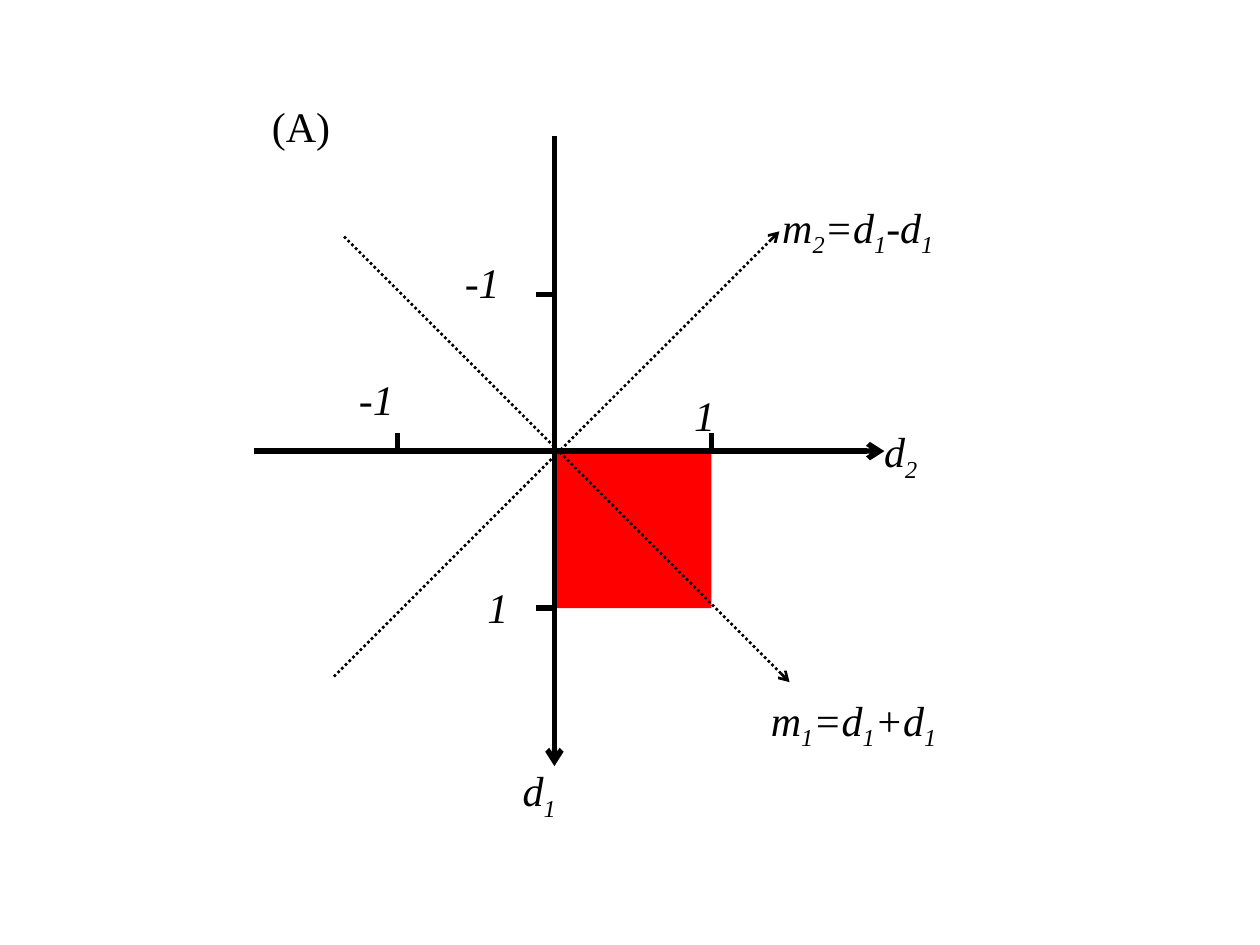
import pptx
import pptx.dml.color
import pptx.enum.dml
import pptx.enum.shapes
import pptx.enum.text
import pptx.oxml
import pptx.oxml.ns
import pptx.util

Pt = pptx.util.Pt
BLACK = pptx.dml.color.RGBColor(0x00, 0x00, 0x00)
RED = pptx.dml.color.RGBColor(0xFF, 0x00, 0x00)
DOTTED = pptx.enum.dml.MSO_LINE.ROUND_DOT  # sysDot

# Coordinate system, in points
X0, Y0 = 316.8, 257.8
UNIT = 89.7
TICK_NEAR, TICK_FAR = 1.4, 10.4


class Diagram:
    font_name = "Times New Roman"
    font_size = 24
    label_height = 36

    def __init__(self, slide):
        self.slide = slide

    def square(self, left, top, side):
        area = self.slide.shapes.add_shape(
            pptx.enum.shapes.MSO_SHAPE.RECTANGLE,
            Pt(left), Pt(top), Pt(side), Pt(side))
        area.shadow.inherit = False
        area.fill.solid()
        area.fill.fore_color.rgb = RED
        area.line.fill.background()

    def line(self, start, end, width=3, dash=None, arrow=False):
        stroke = self.slide.shapes.add_connector(
            pptx.enum.shapes.MSO_CONNECTOR.STRAIGHT,
            *(Pt(value) for value in (*start, *end)))
        stroke.line.color.rgb = BLACK
        stroke.line.width = Pt(width)
        if dash:
            stroke.line.dash_style = dash
        properties = stroke._element.spPr
        if arrow:
            outline = properties.find(pptx.oxml.ns.qn("a:ln"))
            tip = pptx.oxml.parse_xml(
                f'<a:tailEnd {pptx.oxml.ns.nsdecls("a")} type="arrow"/>')
            outline.append(tip)
        properties.append(pptx.oxml.parse_xml(
            f'<a:effectLst {pptx.oxml.ns.nsdecls("a")}/>'))

    def label(self, left, top, width, *parts, italic=True):
        """Write parts that alternate between normal text and subscript."""
        box = self.slide.shapes.add_textbox(
            Pt(left), Pt(top), Pt(width), Pt(self.label_height))
        frame = box.text_frame
        frame.word_wrap = True
        frame.auto_size = pptx.enum.text.MSO_AUTO_SIZE.SHAPE_TO_FIT_TEXT
        for index, part in enumerate(parts):
            run = frame.paragraphs[0].add_run()
            run.text = part
            run.font.name = self.font_name
            run.font.size = Pt(self.font_size)
            run.font.italic = italic
            run.font.color.rgb = BLACK
            if index % 2:
                run._r.get_or_add_rPr().set("baseline", "-25000")


def main():
    deck = pptx.Presentation()
    deck.slide_width, deck.slide_height = Pt(720), Pt(540)
    diagram = Diagram(deck.slides.add_slide(deck.slide_layouts[6]))

    # Unit square
    diagram.square(X0, Y0, UNIT)

    # Axes d2 (to the right) and d1 (downwards)
    diagram.line((145.4, Y0), (505.4, Y0), arrow=True)
    diagram.line((X0, Y0 - 180), (X0, Y0 + 180), arrow=True)

    # Ticks at -1 and 1 on both axes
    for sign in (-1, 1):
        x, y = X0 + sign * UNIT, Y0 + sign * UNIT
        diagram.line((x, Y0 - TICK_FAR), (x, Y0 - TICK_NEAR))
        diagram.line((X0 - TICK_NEAR, y), (X0 - TICK_FAR, y))

    # Rotated axes m1 and m2
    diagram.line((196.6, 135.2), (451.2, 389.8), 1.5, DOTTED, True)
    diagram.line((190.8, 386.6), (445.4, 132.2), 1.5, DOTTED, True)

    # Axis names
    diagram.label(498.2, 239.8, 82, "d", "2")
    diagram.label(291.6, 433.4, 78.5, "d", "1")
    diagram.label(433.4, 393.1, 158.4, "m", "1", "=d", "1", "+d", "1")
    diagram.label(439.9, 111.6, 180, "m", "2", "=d", "1", "-d", "1")

    # Tick values
    diagram.label(389.5, 218.9, 44.6, "1")
    diagram.label(198, 210.2, 85, "-1")
    diagram.label(258.5, 143.3, 72.7, "-1")
    diagram.label(271.4, 329, 44.6, "1")

    # Panel mark
    diagram.label(148.3, 54, 95.8, "(A)", italic=False)

    deck.save("out.pptx")


if __name__ == "__main__":
    main()
